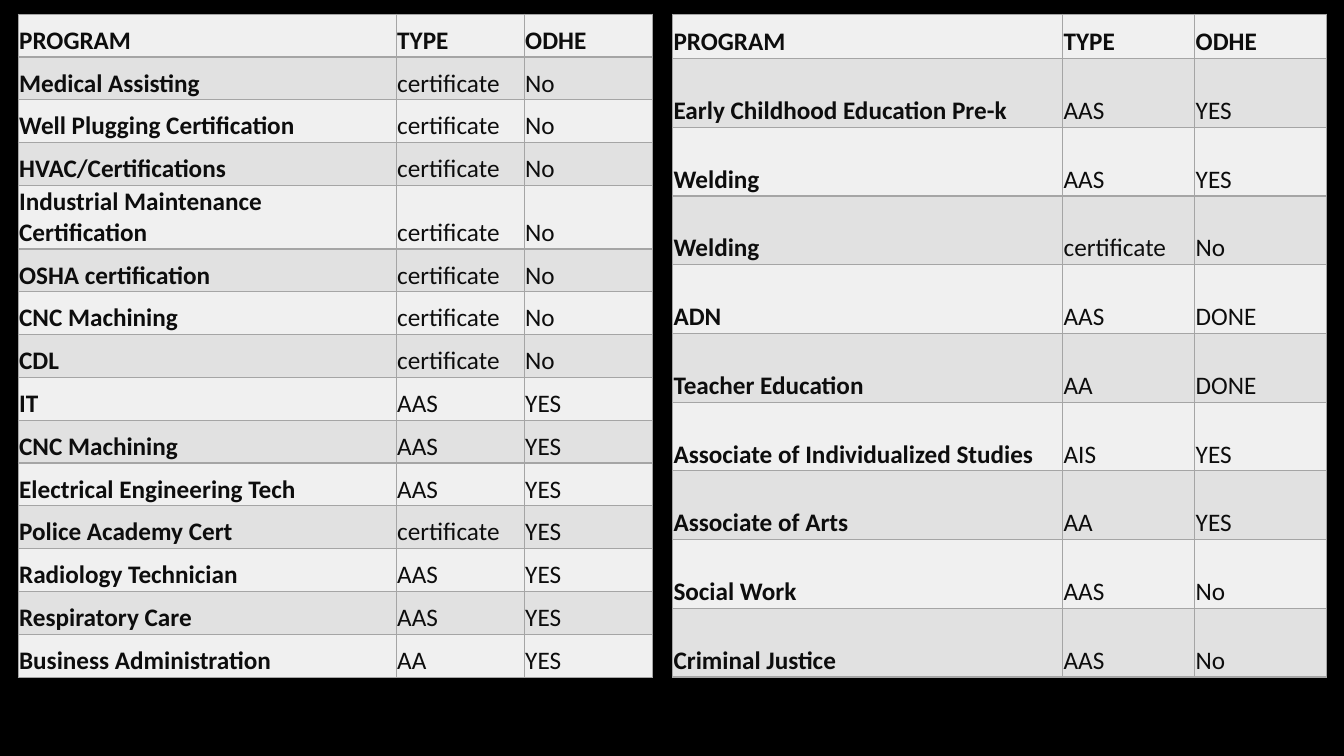
from dataclasses import dataclass

from lxml.etree import SubElement
from pptx import Presentation
from pptx.dml.color import RGBColor as RGB
from pptx.enum.text import MSO_ANCHOR as Anchor
from pptx.oxml.ns import qn
from pptx.util import Inches, Pt


@dataclass(frozen=True)
class Theme:
    font: str = "Calibri"
    size: int = 18
    background: str = "000000"
    text: str = "0D0D0D"
    border: str = "A5A5A5"
    bands: tuple = ("F0F0F0", "E1E1E1")
    border_width: int = 1
    cell_margin: float = 0.01


HEADER = ("PROGRAM", "TYPE", "ODHE")
TABLE_TOP, TABLE_HEIGHT = 0.14, 6.58

LEFT_PROGRAMS = [
    ("Medical Assisting", "certificate", "No"),
    ("Well Plugging Certification", "certificate", "No"),
    ("HVAC/Certifications", "certificate", "No"),
    ("Industrial Maintenance Certification", "certificate", "No"),
    ("OSHA certification", "certificate", "No"),
    ("CNC Machining", "certificate", "No"),
    ("CDL", "certificate", "No"),
    ("IT", "AAS", "YES"),
    ("CNC Machining", "AAS", "YES"),
    ("Electrical Engineering Tech", "AAS", "YES"),
    ("Police Academy Cert", "certificate", "YES"),
    ("Radiology Technician", "AAS", "YES"),
    ("Respiratory Care", "AAS", "YES"),
    ("Business Administration", "AA", "YES"),
]

RIGHT_PROGRAMS = [
    ("Early Childhood Education Pre-k", "AAS", "YES"),
    ("Welding", "AAS", "YES"),
    ("Welding", "certificate", "No"),
    ("ADN", "AAS", "DONE"),
    ("Teacher Education", "AA", "DONE"),
    ("Associate of Individualized Studies", "AIS", "YES"),
    ("Associate of Arts", "AA", "YES"),
    ("Social Work", "AAS", "No"),
    ("Criminal Justice", "AAS", "No"),
]


class SlideBuilder:
    def __init__(self, prs, theme):
        self.theme = theme
        self.s = prs.slides.add_slide(prs.slide_layouts[6])
        fill = self.s.background.fill
        fill.solid()
        fill.fore_color.rgb = RGB.from_string(theme.background)

    def table(self, left, col_widths, programs, special_heights):
        """Add a program table; rows without a special height share the rest."""
        rows = [HEADER, *programs]
        shared = ((TABLE_HEIGHT - sum(special_heights.values()))
                  / (len(rows) - len(special_heights)))
        table = self.s.shapes.add_table(
            len(rows), len(HEADER), Inches(left), Inches(TABLE_TOP),
            Inches(sum(col_widths)), Inches(TABLE_HEIGHT)).table
        for column, width in zip(table.columns, col_widths):
            column.width = Inches(width)
        for i, values in enumerate(rows):
            table.rows[i].height = Inches(special_heights.get(i, shared))
            for j, value in enumerate(values):
                self.cell(table.cell(i, j), value, bold=i == 0 or j == 0,
                          fill=self.theme.bands[i % 2])

    def cell(self, cell, text, bold, fill):
        margin = Inches(self.theme.cell_margin)
        cell.margin_left = cell.margin_right = margin
        cell.margin_top = cell.margin_bottom = margin
        cell.vertical_anchor = Anchor.BOTTOM
        self.borders(cell)
        cell.fill.solid()
        cell.fill.fore_color.rgb = RGB.from_string(fill)
        r = cell.text_frame.paragraphs[0].add_run()
        r.text = text
        r.font.name = self.theme.font
        r.font.size = Pt(self.theme.size)
        r.font.bold = bold
        r.font.color.rgb = RGB.from_string(self.theme.text)

    def borders(self, cell):
        """Draw all four cell borders; call before the fill is set."""
        props = cell._tc.get_or_add_tcPr()
        for side in ("a:lnL", "a:lnR", "a:lnT", "a:lnB"):
            line = SubElement(props, qn(side), w=str(Pt(self.theme.border_width)))
            solid = SubElement(line, qn("a:solidFill"))
            SubElement(solid, qn("a:srgbClr"), val=self.theme.border)


def main():
    prs = Presentation()
    prs.slide_width, prs.slide_height = Inches(13.33), Inches(7.5)
    slide = SlideBuilder(prs, Theme())
    slide.table(0.18, (3.75, 1.27, 1.27), LEFT_PROGRAMS, {4: 0.63})
    slide.table(6.67, (3.87, 1.31, 1.31), RIGHT_PROGRAMS, {0: 0.44})
    prs.save("out.pptx")


if __name__ == "__main__":
    main()
